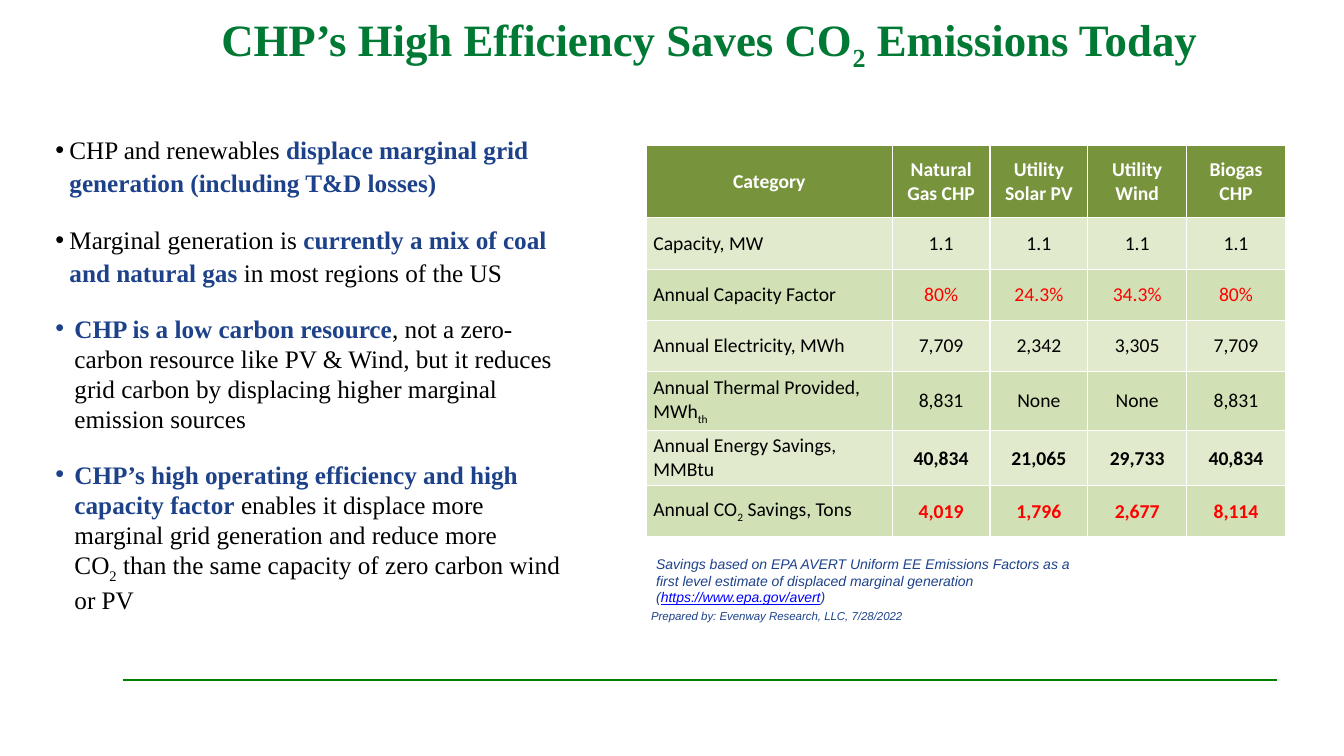
from dataclasses import dataclass, replace

from lxml import etree
from pptx import Presentation
from pptx.dml.color import RGBColor
from pptx.enum.shapes import MSO_CONNECTOR
from pptx.enum.text import MSO_ANCHOR, PP_ALIGN
from pptx.oxml.ns import qn
from pptx.util import Inches, Pt

LEFT, CENTER, RIGHT = PP_ALIGN.LEFT, PP_ALIGN.CENTER, PP_ALIGN.RIGHT
TOP, MIDDLE = MSO_ANCHOR.TOP, MSO_ANCHOR.MIDDLE
STRAIGHT = MSO_CONNECTOR.STRAIGHT

BLACK = RGBColor(0x00, 0x00, 0x00)
WHITE = RGBColor(0xFF, 0xFF, 0xFF)
RED = RGBColor(0xFF, 0x00, 0x00)
NAVY = RGBColor(0x1D, 0x42, 0x8A)
BLUE = RGBColor(0x00, 0x00, 0xFF)
GREEN = RGBColor(0x00, 0x79, 0x34)
RULE = RGBColor(0x00, 0x80, 0x00)
OLIVE = RGBColor(0x77, 0x93, 0x3C)
PALE = RGBColor(0xE1, 0xEA, 0xCC)
LIGHT = RGBColor(0xD2, 0xE1, 0xB5)


@dataclass(frozen=True)
class Look:
    font: str
    size: float
    color: RGBColor = BLACK
    bold: bool = False
    italic: bool = False
    line: bool = False
    sub: bool = False


@dataclass(frozen=True)
class Span:
    text: str
    look: Look


@dataclass(frozen=True)
class Point:
    spans: list[Span]
    indent: float
    space: float


@dataclass(frozen=True)
class Row:
    label: list[Span]
    values: list[str]
    look: Look
    tight: bool = False


HEAD = Look("Times New Roman", 32, GREEN, bold=True)
BODY = Look("Times New Roman", 18)
KEY = replace(BODY, color=NAVY, bold=True)
NOTE = Look("Arial", 10, NAVY, italic=True)
CELL = Look("Calibri", 14)
TOTAL = replace(CELL, bold=True)
ALERT = replace(CELL, color=RED)

TITLE = [
    Span("CHP’s High Efficiency Saves CO", HEAD),
    Span("2", replace(HEAD, sub=True)),
    Span(" Emissions Today", HEAD),
]
POINTS = [
    Point([Span("CHP and renewables ", BODY),
           Span("displace marginal grid generation (including T&D losses)", KEY)],
          0.14, 1.08),
    Point([Span("Marginal generation is ", BODY),
           Span("currently a mix of coal and natural gas ", KEY),
           Span("in most regions of the US", BODY)], 0.14, 1.08),
    Point([Span("CHP is a low carbon resource", KEY),
           Span(", not a zero-carbon resource like PV & Wind, but it reduces grid "
                "carbon by displacing higher marginal emission sources", BODY)],
          0.19, 1.0),
    Point([Span("CHP’s high operating efficiency and high capacity factor", KEY),
           Span(" enables it displace more marginal grid generation and reduce "
                "more \nCO", BODY),
           Span("2", replace(BODY, sub=True)),
           Span(" than the same capacity of zero carbon wind or PV", BODY)],
          0.19, 1.0),
]
SOURCE = [
    Span("Savings based on EPA AVERT Uniform EE Emissions Factors as a first level "
         "estimate of displaced marginal generation (", NOTE),
    Span("https://www.epa.gov/avert", replace(NOTE, color=BLUE, line=True)),
    Span(")", NOTE),
]
AUTHOR = [Span("Prepared by: Evenway Research, LLC, 7/28/2022",
               replace(NOTE, size=8.2))]

WIDTHS = [2.44, 0.97, 0.97, 0.98, 0.98]
ROWS = [
    Row([Span("Category", replace(TOTAL, color=WHITE))],
        ["Natural Gas CHP", "Utility Solar PV", "Utility Wind", "Biogas CHP"],
        replace(TOTAL, color=WHITE)),
    Row([Span("Capacity, MW", CELL)], ["1.1"] * 4, CELL),
    Row([Span("Annual Capacity Factor", CELL)],
        ["80%", "24.3%", "34.3%", "80%"], ALERT),
    Row([Span("Annual Electricity, MWh", CELL)],
        ["7,709", "2,342", "3,305", "7,709"], CELL),
    Row([Span("Annual Thermal Provided, MWh", CELL),
         Span("th", replace(CELL, sub=True))],
        ["8,831", "None", "None", "8,831"], CELL),
    Row([Span("Annual Energy Savings, MMBtu", CELL)],
        ["40,834", "21,065", "29,733", "40,834"], TOTAL, tight=True),
    Row([Span("Annual CO", CELL), Span("2", replace(CELL, sub=True)),
         Span(" Savings, Tons", CELL)],
        ["4,019", "1,796", "2,677", "8,114"], replace(ALERT, bold=True), tight=True),
]


def write(para, spans: list[Span], align: PP_ALIGN = LEFT) -> None:
    """Fill a paragraph with styled runs; a newline is a line break."""
    para.alignment = align
    for span in spans:
        for n, text in enumerate(span.text.split("\n")):
            if n:
                para.add_line_break()
            run = para.add_run()
            run.text = text
            look, font = span.look, run.font
            font.name, font.size = look.font, Pt(look.size)
            font.color.rgb = look.color
            font.bold, font.italic = look.bold, look.italic
            font.underline = look.line
            if look.sub:
                run._r.get_or_add_rPr().set("baseline", "-25000")


def add_box(slide, left: float, top: float, width: float, height: float,
            anchor: MSO_ANCHOR = TOP):
    box = slide.shapes.add_textbox(
        Inches(left), Inches(top), Inches(width), Inches(height))
    frame = box.text_frame
    frame.word_wrap = True
    frame.vertical_anchor = anchor
    return frame


def add_points(frame, points: list[Point]) -> None:
    for n, point in enumerate(points):
        para = frame.add_paragraph() if n else frame.paragraphs[0]
        write(para, point.spans)
        para.line_spacing = point.space
        para.space_after = Pt(18)
        props = para._p.get_or_add_pPr()
        props.set("marL", str(Inches(point.indent)))
        props.set("indent", str(-Inches(point.indent)))
        etree.SubElement(props, qn("a:buFont")).set("typeface", "Arial")
        etree.SubElement(props, qn("a:buChar")).set("char", "•")


def add_grid(slide, rows: list[Row]) -> None:
    frame = slide.shapes.add_table(
        len(rows), len(WIDTHS), Inches(6.41), Inches(1.44),
        Inches(sum(WIDTHS)), Inches(3.78))
    table = frame.table
    for col, width in zip(table.columns, WIDTHS):
        col.width = Inches(width)
    for r, row in enumerate(rows):
        table.rows[r].height = Inches(0.51 if r else 0.72)
        fill = (PALE if r % 2 else LIGHT) if r else OLIVE
        cells = [row.label] + [[Span(value, row.look)] for value in row.values]
        for c, spans in enumerate(cells):
            cell = table.cell(r, c)
            cell.fill.solid()
            cell.fill.fore_color.rgb = fill
            cell.vertical_anchor = MIDDLE
            tight = row.tight and c > 0
            cell.margin_left = cell.margin_right = Inches(0.01 if tight else 0.07)
            cell.margin_top = Inches(0.01 if tight else 0.04)
            cell.margin_bottom = Inches(0 if tight else 0.04)
            write(cell.text_frame.paragraphs[0], spans,
                  LEFT if r and not c else CENTER)


def add_rule(slide) -> None:
    rule = slide.shapes.add_connector(
        STRAIGHT, Inches(1.22), Inches(6.75), Inches(12.67), Inches(6.75))
    rule.line.color.rgb = RULE
    rule.line.width = Pt(1.5)
    etree.SubElement(rule._element.spPr, qn("a:effectLst"))


def main() -> None:
    deck = Presentation()
    deck.slide_width, deck.slide_height = Inches(13.33), Inches(7.5)
    slide = deck.slides.add_slide(deck.slide_layouts[6])
    add_rule(slide)
    add_points(add_box(slide, 0.45, 1.26, 5.32, 4.98), POINTS)
    write(add_box(slide, 6.41, 5.46, 4.51, 0.77).paragraphs[0], SOURCE)
    write(add_box(slide, 6.24, 5.99, 2.81, 0.24).paragraphs[0], AUTHOR, RIGHT)
    add_grid(slide, ROWS)
    write(add_box(slide, 0.73, 0.09, 12.61, 0.66, MIDDLE).paragraphs[0],
          TITLE, CENTER)
    deck.save("out.pptx")


if __name__ == "__main__":
    main()
